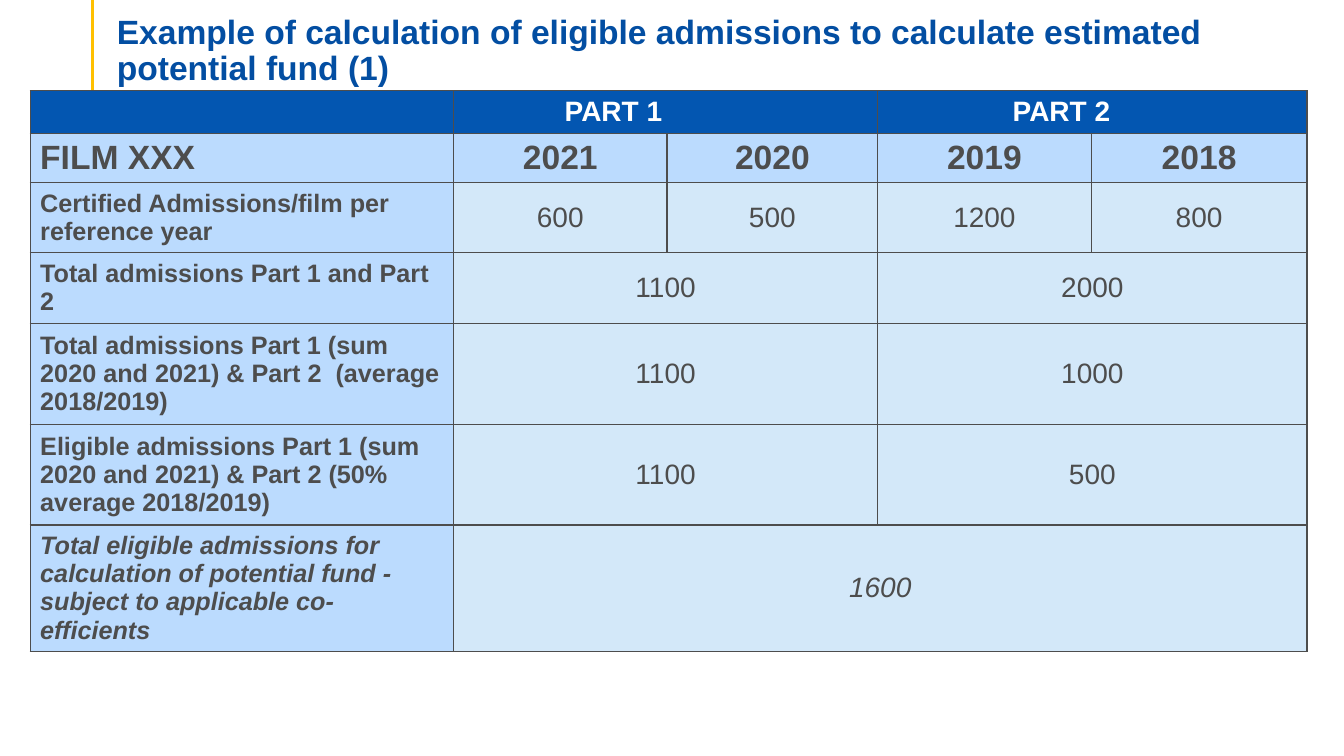
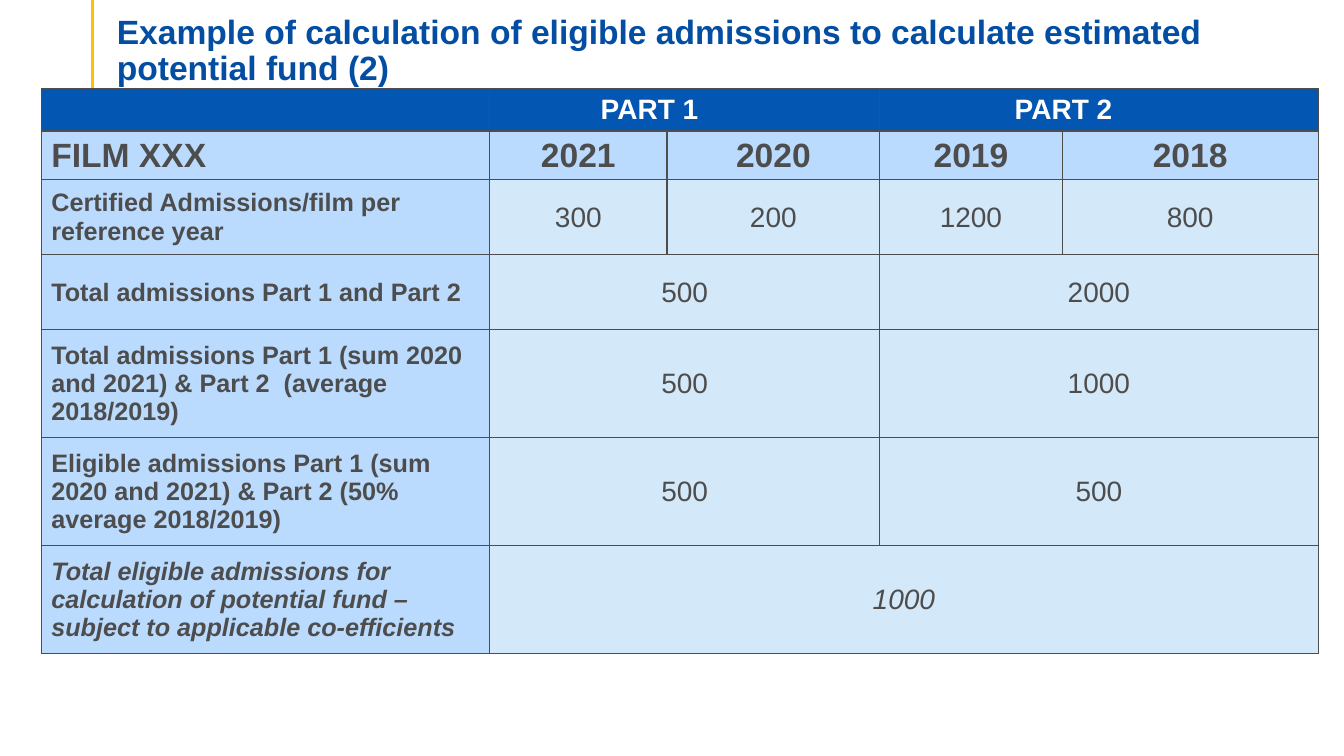
from pptx import Presentation
from pptx.dml.color import RGBColor
from pptx.enum.shapes import MSO_CONNECTOR
from pptx.enum.text import MSO_ANCHOR, MSO_AUTO_SIZE, PP_ALIGN
from pptx.oxml import parse_xml
from pptx.oxml.ns import nsdecls
from pptx.util import Cm, Pt

NAVY = RGBColor(0x03, 0x4E, 0xA2)
BLUE = RGBColor(0x03, 0x56, 0xB1)
SKY = RGBColor(0xBB, 0xDB, 0xFE)
PALE = RGBColor(0xD3, 0xE8, 0xF9)
GREY = RGBColor(0x4D, 0x4D, 0x4D)
GOLD = RGBColor(0xFF, 0xC0, 0x00)
WHITE = RGBColor(0xFF, 0xFF, 0xFF)
FONT = "Arial"
YEARS = ["2021", "2020", "2019", "2018"]


class Deck:
    def __init__(self):
        self.prs = Presentation()
        self.prs.slide_width, self.prs.slide_height = Cm(33.87), Cm(19.05)
        self.slide = None

    def text(self, para, words, size, color, bold=True, italic=False):
        run = para.add_run()
        run.text = words
        font = run.font
        font.name, font.size, font.bold, font.italic = FONT, Pt(size), bold, italic
        font.color.rgb = color

    def start(self, title):
        self.slide = self.prs.slides.add_slide(self.prs.slide_layouts[5])
        self.rule()
        self.title(title)

    def rule(self):
        line = self.slide.shapes.add_connector(
            MSO_CONNECTOR.STRAIGHT, Cm(2.34), 0, Cm(2.34), Cm(3.56))
        line.line.color.rgb, line.line.width = GOLD, Pt(2.25)
        line._element.spPr.append(parse_xml(f"<a:effectLst {nsdecls('a')}/>"))

    def title(self, words):
        shape = self.slide.shapes.title
        shape.left, shape.top = Cm(2.69), 0
        shape.width, shape.height = Cm(30.86), Cm(2.21)
        frame = shape.text_frame
        frame.auto_size, frame.word_wrap = MSO_AUTO_SIZE.NONE, True
        frame.vertical_anchor = MSO_ANCHOR.BOTTOM
        frame.margin_bottom = 0
        para = frame.paragraphs[0]
        para.alignment, para.line_spacing = PP_ALIGN.LEFT, 0.9
        self.text(para, words, 24, NAVY)

    def table(self, left, top, cols, heights):
        frame = self.slide.shapes.add_table(
            len(heights), len(cols), Cm(left), Cm(top),
            Cm(sum(cols)), Cm(sum(heights)))
        grid = frame.table
        for col, width in zip(grid.columns, cols):
            col.width = Cm(width)
        for row, height in zip(grid.rows, heights):
            row.height = Cm(height)
        return grid

    def border(self, cell):
        props = cell._tc.get_or_add_tcPr()
        for side in "LRTB":
            props.append(parse_xml(
                f'<a:ln{side} w="12700" {nsdecls("a")}><a:solidFill>'
                f'<a:srgbClr val="{GREY}"/></a:solidFill></a:ln{side}>'))

    def row(self, grid, index, texts, fills, styles, indents=None):
        """Fill a row: a label, then values that share the other columns evenly.

        fills and styles hold one entry for the label and one for the values.
        """
        count = len(grid.columns) - 1
        span = count // (len(texts) - 1)
        for col in range(count + 1):
            cell = grid.cell(index, col)
            self.border(cell)
            cell.fill.solid()
            cell.fill.fore_color.rgb = fills[col > 0]
        starts = [0, *range(1, count + 1, span)]
        for pos, (col, words) in enumerate(zip(starts, texts)):
            cell = grid.cell(index, col)
            cell.vertical_anchor = MSO_ANCHOR.MIDDLE
            if col and span > 1:
                cell.merge(grid.cell(index, col + span - 1))
            para = cell.text_frame.paragraphs[0]
            if indents:
                cell.margin_left = Cm(indents[pos])
            elif col:
                para.alignment = PP_ALIGN.CENTER
            if words:
                self.text(para, words, **styles[col > 0])


def style(size, color=GREY, bold=True, italic=False):
    return dict(size=size, color=color, bold=bold, italic=italic)


def example(deck, number, admits, dash, place, cols, heights):
    """Add one worked example; admits follows the order of YEARS."""
    deck.start("Example of calculation of eligible admissions to calculate "
               f"estimated potential fund ({number})")
    grid = deck.table(*place, cols, heights)
    first, second = sum(admits[:2]), sum(admits[2:])
    mean = second // 2
    half = mean // 2

    deck.row(grid, 0, ["", "PART 1", "PART 2"], (BLUE, BLUE),
             [style(20, WHITE)] * 2, indents=(0.25, 2.8, 3.4))
    deck.row(grid, 1, ["FILM XXX", *YEARS], (SKY, SKY), [style(24)] * 2)
    body = [
        ("Certified Admissions/film per reference year", *admits),
        ("Total admissions Part 1 and Part 2", first, second),
        ("Total admissions Part 1 (sum 2020 and 2021) & Part 2  "
         "(average 2018/2019)", first, mean),
        ("Eligible admissions Part 1 (sum 2020 and 2021) & Part 2 "
         "(50% average 2018/2019)", first, half),
        (f"Total eligible admissions for calculation of potential fund {dash} "
         "subject to applicable co-efficients", first + half),
    ]
    for index, texts in enumerate(body, 2):
        last = index == len(body) + 1
        deck.row(grid, index, [str(item) for item in texts], (SKY, PALE),
                 [style(18, italic=last), style(20, bold=False, italic=last)])


def main():
    deck = Deck()
    example(deck, 1, [600, 500, 1200, 800], "-", (0.76, 2.29),
            [10.67, 5.38, 5.31, 5.38, 5.44],
            [1.07, 1.23, 1.78, 1.78, 2.54, 2.54, 3.18])
    example(deck, 2, [300, 200, 1200, 800], "–", (1.04, 2.23),
            [11.3, 4.47, 5.36, 4.6, 6.45],
            [1.07, 1.23, 1.89, 1.89, 2.72, 2.72, 2.72])
    deck.prs.save("out.pptx")


if __name__ == "__main__":
    main()
